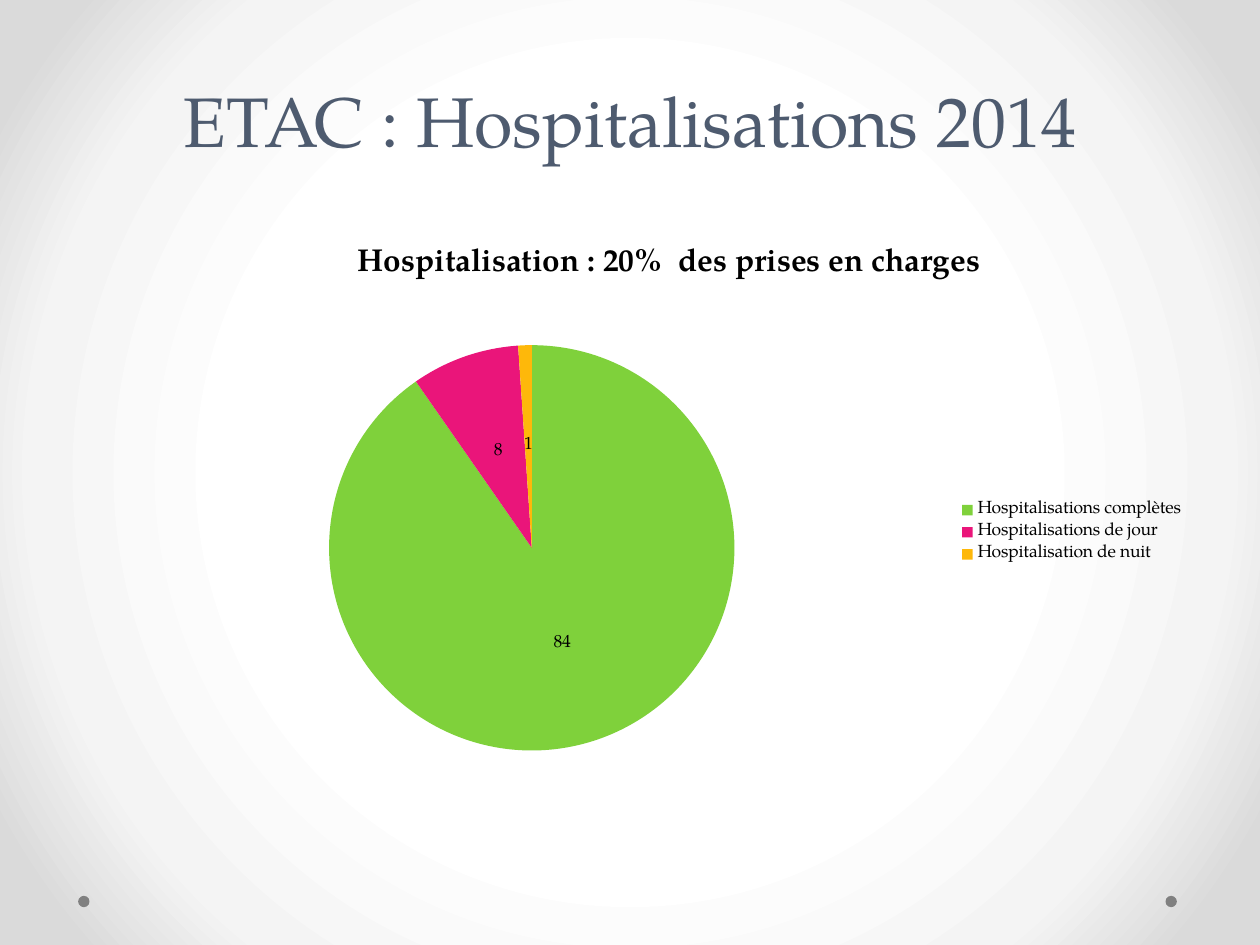
from dataclasses import dataclass

from lxml import etree
from pptx import Presentation
from pptx.chart.data import CategoryChartData
from pptx.dml.color import RGBColor
from pptx.enum.chart import XL_CHART_TYPE, XL_LABEL_POSITION, XL_LEGEND_POSITION
from pptx.enum.shapes import MSO_SHAPE
from pptx.enum.text import MSO_ANCHOR, PP_ALIGN
from pptx.oxml import parse_xml
from pptx.oxml.ns import nsdecls, qn
from pptx.util import Inches, Pt

PIE = XL_CHART_TYPE.PIE
CENTER_LABEL = XL_LABEL_POSITION.CENTER
LEGEND_RIGHT = XL_LEGEND_POSITION.RIGHT
OVAL = MSO_SHAPE.OVAL
MIDDLE = MSO_ANCHOR.MIDDLE
CENTER = PP_ALIGN.CENTER

WIDTH, HEIGHT = Inches(10), Inches(7.5)
FONT = "TeX Gyre Pagella"
COLORS = {
    "title": "4E5B6F", "text": "000000", "dot": "808080",
    "green": "7FD13B", "pink": "EA157A", "amber": "FEB80A",
}
BACKGROUND_STOPS = [(50, "FFFFFF"), (76, "F4F4F4"), (92, "DADADA")]


@dataclass
class Stay:
    label: str
    count: int
    color: str


STAYS = [
    Stay("Hospitalisations complètes", 84, "green"),
    Stay("Hospitalisations de jour", 8, "pink"),
    Stay("Hospitalisation de nuit", 1, "amber"),
]


def rgb(name: str) -> RGBColor:
    return RGBColor.from_string(COLORS[name])


def style_font(font, size: float, color: str, bold: bool = False) -> None:
    font.name, font.size, font.bold = FONT, Pt(size), bold
    font.color.rgb = rgb(color)


def set_background(s) -> None:
    """Fill the slide with a circular gradient around its centre."""
    s.background.fill.solid()
    bg_pr = s.background._cSld.bg.bgPr
    stops = "".join(
        f'<a:gs pos="{pos * 1000}"><a:srgbClr val="{color}"/></a:gs>'
        for pos, color in BACKGROUND_STOPS
    )
    gradient = parse_xml(
        f'<a:gradFill {nsdecls("a")} rotWithShape="1"><a:gsLst>{stops}</a:gsLst>'
        '<a:path path="circle"><a:fillToRect l="50000" t="50000" r="50000" b="50000"/>'
        "</a:path></a:gradFill>"
    )
    bg_pr.replace(bg_pr.find(qn("a:solidFill")), gradient)


def add_dot(s, left: float) -> None:
    size = Inches(0.09)
    sp = s.shapes.add_shape(OVAL, Inches(left), Inches(7.11), size, size)
    sp.shadow.inherit = False
    sp.fill.solid()
    sp.fill.fore_color.rgb = rgb("dot")
    sp.line.fill.background()


def add_title(s, text: str) -> None:
    sp = s.shapes.add_textbox(int(WIDTH * 0.05), 0, int(WIDTH * 0.9), Inches(1.75))
    tf = sp.text_frame
    tf.word_wrap = True
    tf.vertical_anchor = MIDDLE
    p = tf.paragraphs[0]
    p.text = text
    p.alignment = CENTER
    p.line_spacing = Pt(58)
    style_font(p.runs[0].font, 40, "title")


def set_plot_layout(chart, x: float, y: float, w: float, h: float) -> None:
    """Place the inner plot area, in shares of the chart's size."""
    plot_area = chart._chartSpace.chart.plotArea
    for old in plot_area.findall(qn("c:layout")):
        plot_area.remove(old)
    layout = etree.Element(qn("c:layout"))
    manual = etree.SubElement(layout, qn("c:manualLayout"))
    settings = {"layoutTarget": "inner", "xMode": "edge", "yMode": "edge",
                "x": x, "y": y, "w": w, "h": h}
    for tag, value in settings.items():
        etree.SubElement(manual, qn(f"c:{tag}")).set("val", str(value))
    plot_area.insert(0, layout)


def add_pie(s, title: str, stays: list[Stay]) -> None:
    data = CategoryChartData()
    data.categories = [stay.label for stay in stays]
    data.add_series("Series 1", [stay.count for stay in stays])
    chart = s.shapes.add_chart(PIE, Inches(1.12), Inches(1.75),
                               Inches(8.38), Inches(4.95), data).chart
    style_font(chart.font, 10, "text")

    # Title and legend
    chart.has_title = True
    p = chart.chart_title.text_frame.paragraphs[0]
    p.text = title
    style_font(p.runs[0].font, 18, "text", bold=True)
    chart.has_legend = True
    chart.legend.position = LEGEND_RIGHT
    chart.legend.include_in_layout = False
    style_font(chart.legend.font, 10, "text")

    # Slices and value labels
    plot = chart.plots[0]
    plot.vary_by_categories = True
    for i, stay in enumerate(stays):
        fill = plot.series[0].points[i].format.fill
        fill.solid()
        fill.fore_color.rgb = rgb(stay.color)
    plot.has_data_labels = True
    labels = plot.data_labels
    labels.show_value = True
    labels.show_percentage = False
    labels.position = CENTER_LABEL
    style_font(labels.font, 10, "text")
    set_plot_layout(chart, 0.09, 0.2, 0.56, 0.65)


def main() -> None:
    prs = Presentation()
    prs.slide_width, prs.slide_height = WIDTH, HEIGHT
    s = prs.slides.add_slide(prs.slide_layouts[6])
    set_background(s)
    for left in (9.25, 0.62):
        add_dot(s, left)
    add_title(s, "ETAC : Hospitalisations 2014")
    add_pie(s, "Hospitalisation : 20%  des prises en charges", STAYS)
    prs.save("out.pptx")


if __name__ == "__main__":
    main()
